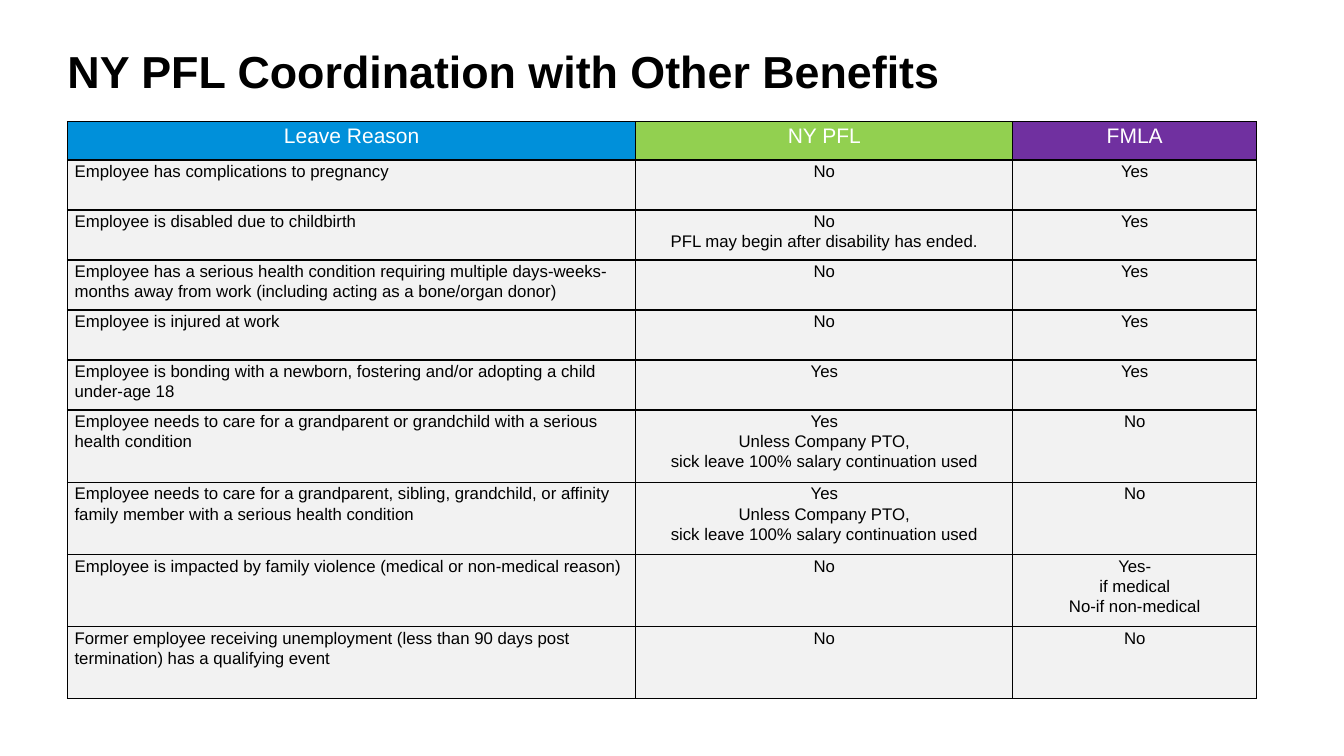
from lxml import etree
from pptx import Presentation
from pptx.dml.color import RGBColor
from pptx.enum.text import MSO_ANCHOR, MSO_AUTO_SIZE, PP_ALIGN
from pptx.oxml.ns import qn
from pptx.util import Cm, Pt

LEFT, CENTER = PP_ALIGN.LEFT, PP_ALIGN.CENTER
TOP, MIDDLE = MSO_ANCHOR.TOP, MSO_ANCHOR.MIDDLE
NO_AUTOFIT = MSO_AUTO_SIZE.NONE

BLACK = RGBColor(0x00, 0x00, 0x00)
WHITE = RGBColor(0xFF, 0xFF, 0xFF)
BLUE = RGBColor(0x00, 0x90, 0xDA)
GREEN = RGBColor(0x92, 0xD0, 0x50)
PURPLE = RGBColor(0x70, 0x30, 0xA0)
LIGHT_GRAY = RGBColor(0xF2, 0xF2, 0xF2)

FONT = "Arial"
TITLE = "NY PFL Coordination with Other Benefits"
HEADERS = [("Leave Reason", BLUE), ("NY PFL", GREEN), ("FMLA", PURPLE)]
UNLESS_PAID = "Yes\nUnless Company PTO,\nsick leave 100% salary continuation used"
LEAVE_REASONS = [
    ("Employee has complications to pregnancy", "No", "Yes"),
    ("Employee is disabled due to childbirth",
     "No\nPFL may begin after disability has ended.", "Yes"),
    ("Employee has a serious health condition requiring multiple days-weeks-months "
     "away from work (including acting as a bone/organ donor)", "No", "Yes"),
    ("Employee is injured at work", "No", "Yes"),
    ("Employee is bonding with a newborn, fostering and/or adopting a child "
     "under-age 18", "Yes", "Yes"),
    ("Employee needs to care for a grandparent or grandchild with a serious "
     "health condition", UNLESS_PAID, "No"),
    ("Employee needs to care for a grandparent, sibling, grandchild, or affinity "
     "family member with a serious health condition", UNLESS_PAID, "No"),
    ("Employee is impacted by family violence (medical or non-medical reason)",
     "No", "Yes-\nif medical\nNo-if non-medical"),
    ("Former employee receiving unemployment (less than 90 days post termination) "
     "has a qualifying event", "No", "No"),
]
COLUMN_SHARES = [0.478, 0.317, 0.205]
ROW_HEIGHTS = [Cm(0.96)] + [Cm(1.26)] * 5 + [Cm(1.82)] * 4


def write_text(frame, text, size, color=BLACK, bold=False, align=LEFT, spacing=1.07):
    """Write each line of the text as one formatted paragraph."""
    for index, line in enumerate(text.split("\n")):
        paragraph = frame.add_paragraph() if index else frame.paragraphs[0]
        paragraph.text = line
        paragraph.alignment = align
        paragraph.line_spacing = spacing
        paragraph.space_before = paragraph.space_after = Pt(0)
        font = paragraph.font
        font.name, font.size, font.bold = FONT, Pt(size), bold
        font.color.rgb = color


def add_borders(cell):
    properties = cell._tc.get_or_add_tcPr()
    for position, side in enumerate(("lnL", "lnR", "lnT", "lnB")):
        line = etree.Element(qn(f"a:{side}"), w=str(Pt(1)))
        fill = etree.SubElement(line, qn("a:solidFill"))
        etree.SubElement(fill, qn("a:srgbClr"), val=str(BLACK))
        properties.insert(position, line)


def format_cell(cell, text, fill, **text_format):
    cell.margin_left = cell.margin_right = Cm(0.18)
    cell.margin_top, cell.margin_bottom = Cm(0.03), 0
    cell.vertical_anchor = TOP
    cell.fill.solid()
    cell.fill.fore_color.rgb = fill
    add_borders(cell)
    write_text(cell.text_frame, text, **text_format)


def place_title(slide, left, top, width, height):
    title = slide.shapes.title
    title.left, title.top, title.width, title.height = left, top, width, height
    frame = title.text_frame
    frame.margin_left = frame.margin_right = frame.margin_top = frame.margin_bottom = 0
    frame.word_wrap = True
    frame.auto_size = NO_AUTOFIT
    frame.vertical_anchor = MIDDLE
    write_text(frame, TITLE, size=32, bold=True, spacing=0.9)


def add_benefits_table(slide, left, top, width):
    frame = slide.shapes.add_table(len(ROW_HEIGHTS), len(HEADERS), left, top,
                                   width, sum(ROW_HEIGHTS))
    table = frame.table
    table.first_row = table.horz_banding = False
    for column, share in zip(table.columns, COLUMN_SHARES):
        column.width = round(width * share)
    for row, height in zip(table.rows, ROW_HEIGHTS):
        row.height = height

    # Header row
    for index, (text, fill) in enumerate(HEADERS):
        format_cell(table.cell(0, index), text, fill, size=15, color=WHITE, align=CENTER)

    # Leave reasons and their answers
    for row_index, texts in enumerate(LEAVE_REASONS, start=1):
        for index, text in enumerate(texts):
            format_cell(table.cell(row_index, index), text, LIGHT_GRAY, size=12,
                        align=CENTER if index else LEFT)


def main():
    presentation = Presentation()
    presentation.slide_width, presentation.slide_height = Cm(33.87), Cm(19.05)
    slide = presentation.slides.add_slide(presentation.slide_layouts[5])
    margin = Cm(1.7)
    place_title(slide, margin, Cm(1.27), Cm(26.24), Cm(1.17))
    add_benefits_table(slide, margin, Cm(3.07), Cm(29.97))
    presentation.save("out.pptx")


if __name__ == "__main__":
    main()
